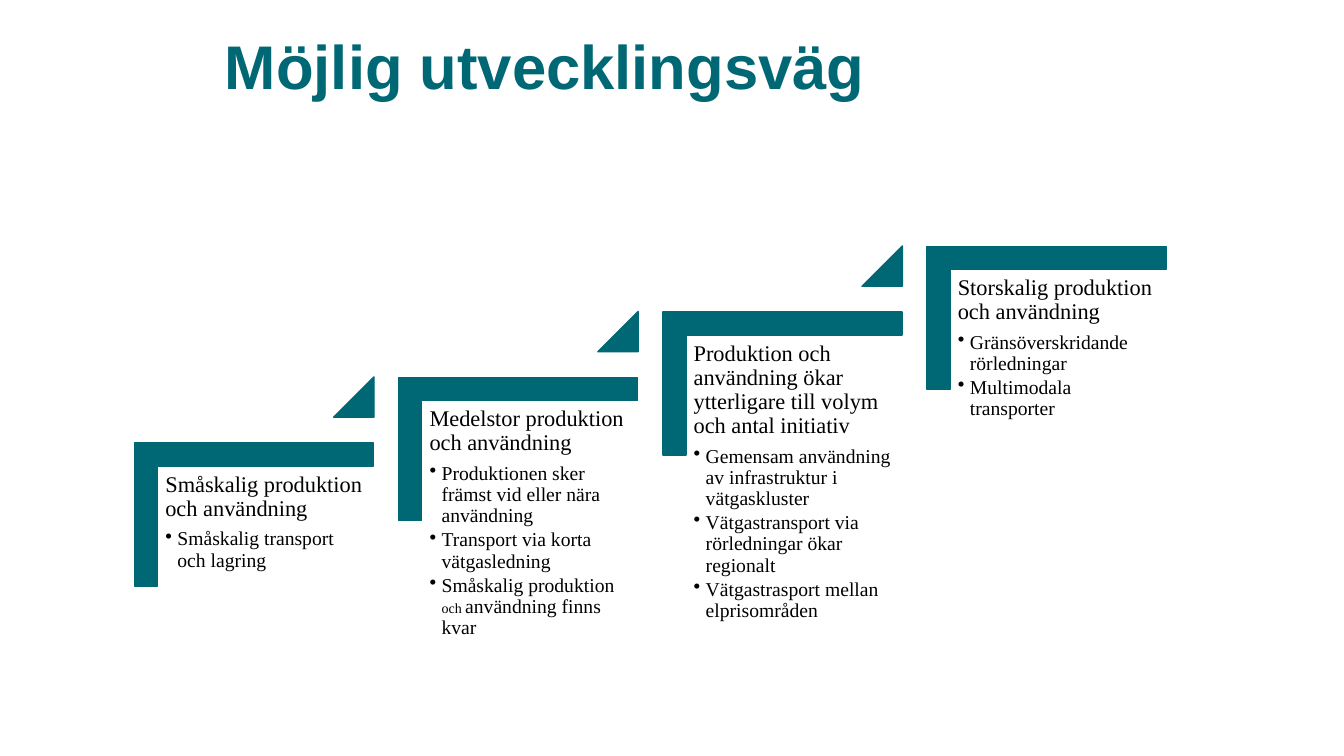
import pptx
import pptx.dml.color
import pptx.enum.shapes
import pptx.enum.text
import pptx.oxml.ns
import pptx.util
from dataclasses import dataclass
from lxml import etree
from pptx.util import Inches, Pt


@dataclass(frozen=True)
class Theme:
    teal: str = "006875"
    black: str = "000000"
    title_font: str = "Arial"
    body_font: str = "Times New Roman"
    title_size: int = 44
    heading_size: int = 16
    bullet_size: int = 14
    small_size: int = 10


STEPS = [
    ("Småskalig produktion och användning",
     ["Småskalig transport och lagring"]),
    ("Medelstor produktion och användning",
     ["Produktionen sker främst vid eller nära användning",
      "Transport via korta vätgasledning",
      ("Småskalig produktion ", "och ", "användning finns kvar")]),
    ("Produktion och användning ökar ytterligare till volym och antal initiativ",
     ["Gemensam användning av infrastruktur i vätgaskluster",
      "Vätgastransport via rörledningar ökar regionalt",
      "Vätgastrasport mellan elprisområden"]),
    ("Storskalig produktion och användning",
     ["Gränsöverskridande rörledningar",
      "Multimodala transporter"]),
]
STEP_RUN, STEP_RISE = 2.62, 0.65


class StaircaseSlide:
    def __init__(self, slide, theme):
        self.theme = theme
        self.shapes = slide.shapes
        self.staircase = slide.shapes.add_group_shape().shapes

    def style_font(self, font, name, size, color, bold=False):
        font.name = name
        font.size = Pt(size)
        font.bold = bold
        font.color.rgb = pptx.dml.color.RGBColor.from_string(color)

    def text_frame(self, shapes, left, top, width, height, inset):
        frame = shapes.add_textbox(
            Inches(left), Inches(top), Inches(width), Inches(height)).text_frame
        frame.word_wrap = True
        frame.vertical_anchor = pptx.enum.text.MSO_ANCHOR.TOP
        frame.margin_left = frame.margin_right = Inches(inset)
        frame.margin_top = frame.margin_bottom = Inches(min(inset, 0.07))
        return frame

    def title(self, text):
        frame = self.text_frame(self.shapes, 0.23, 0.29, 10.36, 0.95, 0.1)
        paragraph = frame.paragraphs[0]
        paragraph.text = text
        paragraph.alignment = pptx.enum.text.PP_ALIGN.CENTER
        paragraph.line_spacing = 0.9
        self.style_font(paragraph.font, self.theme.title_font,
                        self.theme.title_size, self.theme.teal, bold=True)

    def teal_shape(self, kind, left, top, width, height, adjustments):
        shape = self.staircase.add_shape(
            kind, Inches(left), Inches(top), Inches(width), Inches(height))
        shape.shadow.inherit = False
        teal = pptx.dml.color.RGBColor.from_string(self.theme.teal)
        shape.fill.solid()
        shape.fill.fore_color.rgb = teal
        shape.line.color.rgb = teal
        shape.line.width = Pt(1)
        for index, value in enumerate(adjustments):
            shape.adjustments[index] = value
        return shape

    def bracket(self, left, top):
        corner = self.teal_shape(pptx.enum.shapes.MSO_SHAPE.CORNER,
                                 left, top, 1.42, 2.37, (0.16, 0.16))
        corner.rotation = 90

    def rise_marker(self, left, top):
        self.teal_shape(pptx.enum.shapes.MSO_SHAPE.ISOSCELES_TRIANGLE,
                        left, top, 0.4, 0.4, (1,))

    def bullet(self, frame, content):
        """Add a bullet; in a tuple, every second part is set small."""
        paragraph = frame.add_paragraph()
        paragraph.level = 1
        paragraph.line_spacing = 0.9
        paragraph.space_after = Pt(2.1)
        properties = paragraph._p.get_or_add_pPr()
        properties.set("marL", str(Inches(0.12)))
        properties.set("indent", str(Inches(-0.12)))
        mark = etree.SubElement(properties, pptx.oxml.ns.qn("a:buChar"))
        mark.set("char", "•")
        self.style_font(paragraph.font, self.theme.body_font,
                        self.theme.bullet_size, self.theme.black)
        parts = (content,) if isinstance(content, str) else content
        for index, part in enumerate(parts):
            run = paragraph.add_run()
            run.text = part
            if index % 2:
                run.font.size = Pt(self.theme.small_size)

    def step_text(self, left, top, heading, bullets):
        frame = self.text_frame(self.staircase, left, top, 2.14, 1.88, 0.07)
        paragraph = frame.paragraphs[0]
        paragraph.text = heading
        paragraph.line_spacing = 0.9
        paragraph.space_after = Pt(5.6)
        self.style_font(paragraph.font, self.theme.body_font,
                        self.theme.heading_size, self.theme.black)
        for content in bullets:
            self.bullet(frame, content)


def main():
    presentation = pptx.Presentation()
    presentation.slide_width = Inches(13.33)
    presentation.slide_height = Inches(7.5)
    slide = presentation.slides.add_slide(presentation.slide_layouts[6])
    page = StaircaseSlide(slide, Theme())
    page.title("Möjlig utvecklingsväg")
    for index, (heading, bullets) in enumerate(STEPS):
        across, up = index * STEP_RUN, index * STEP_RISE
        page.bracket(1.81 + across, 3.92 - up)
        page.step_text(1.57 + across, 4.62 - up, heading, bullets)
        if index < len(STEPS) - 1:
            page.rise_marker(3.31 + across, 3.74 - up)
    presentation.save("out.pptx")


if __name__ == "__main__":
    main()
